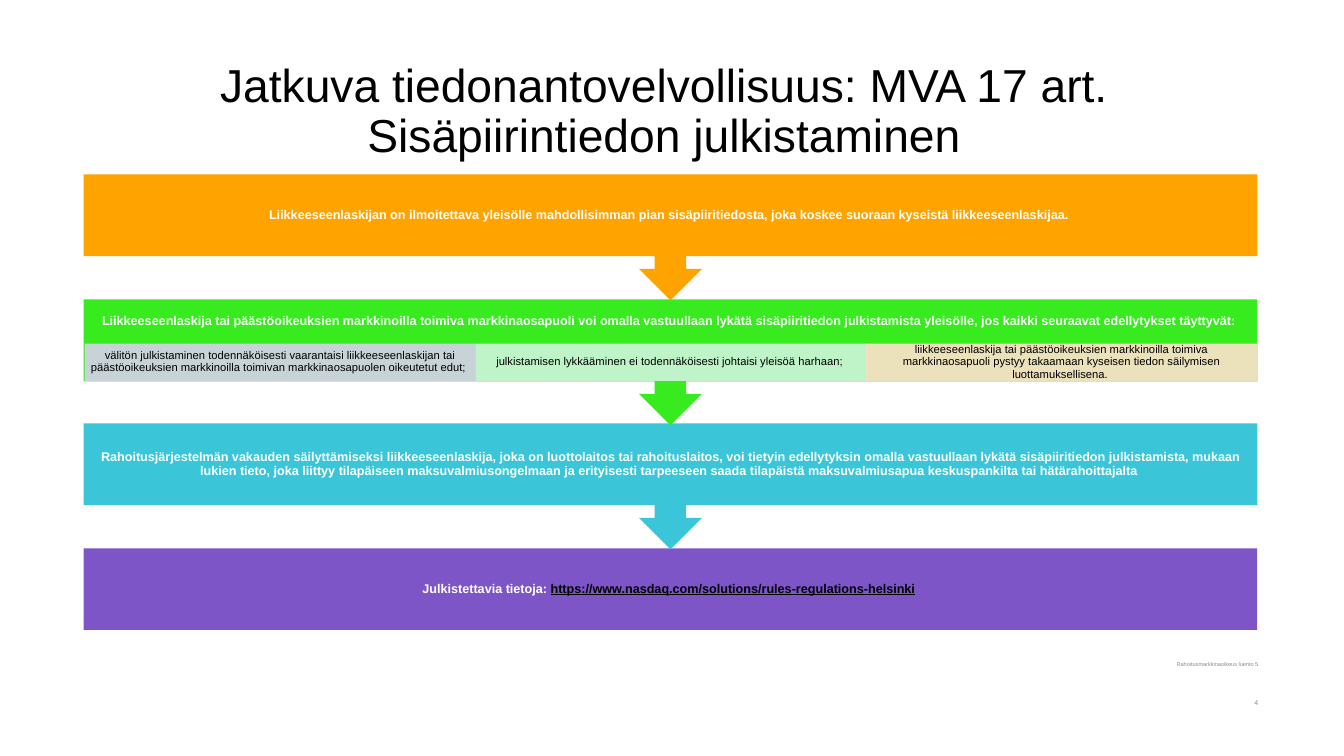
from dataclasses import dataclass

from lxml.etree import SubElement
from pptx import Presentation
from pptx.dml.color import RGBColor
from pptx.enum.shapes import MSO_SHAPE
from pptx.enum.text import MSO_ANCHOR, PP_ALIGN
from pptx.oxml.ns import qn
from pptx.util import Pt

PX = 9144  # 100 px to the inch


@dataclass(frozen=True)
class Theme:
    font: str = "Arial"
    black: str = "000000"
    white: str = "FFFFFF"
    grey: str = "8C8C8C"
    orange: str = "FFA300"
    green: str = "37EB1E"
    cyan: str = "3AC6D8"
    purple: str = "7D55C7"
    conditions: tuple = ("D7D1EB", "CDF6DA", "FFE0CB")
    title_size: int = 33
    step_size: int = 9
    condition_size: int = 8
    footer_size: int = 4
    number_size: int = 5


theme = Theme()


def write(shape, text, size, color, insets, bold=False, align=PP_ALIGN.CENTER):
    frame = shape.text_frame
    frame.word_wrap = True
    frame.vertical_anchor = MSO_ANCHOR.MIDDLE
    (frame.margin_left, frame.margin_top,
     frame.margin_right, frame.margin_bottom) = [inset * PX for inset in insets]
    frame.text = text
    paragraph = frame.paragraphs[0]
    paragraph.alignment = align
    paragraph.line_spacing = 0.9
    for run in paragraph.runs:
        run.font.name = theme.font
        run.font.size = Pt(size)
        run.font.bold = bold
        run.font.color.rgb = RGBColor.from_string(color)
    return paragraph


def add_panel(preset, left, top, width, height, color):
    panel = slide.shapes.add_shape(preset, left * PX, top * PX, width * PX, height * PX)
    panel.shadow.inherit = False
    panel.fill.solid()
    panel.fill.fore_color.rgb = RGBColor.from_string(color)
    panel.line.fill.background()
    return panel


prs = Presentation()
prs.slide_width = 1333 * PX
prs.slide_height = 750 * PX
slide = prs.slides.add_slide(prs.slide_layouts[6])

LEFT, WIDTH = 83, 1164
BODY_HEIGHT, CALLOUT_HEIGHT = 81, 125
FIRST_TOP, LAST_TOP = 173, 544
CONDITIONS_TOP, CONDITIONS_HEIGHT = 341, 37

# Title
title = slide.shapes.add_textbox(LEFT * PX, 53 * PX, WIDTH * PX, 118 * PX)
write(title,
      "Jatkuva tiedonantovelvollisuus: MVA 17 art. \vSisäpiirintiedon julkistaminen ",
      theme.title_size, theme.black, (10, 5, 10, 5))

# Footer and slide number
for text, top, height, size in [
    ("Rahoitusmarkkinaoikeus luento 5", 651, 17, theme.footer_size),
    ("4", 689, 18, theme.number_size),
]:
    footer = slide.shapes.add_textbox(720 * PX, top * PX, 528 * PX, height * PX)
    write(footer, text, size, theme.grey, (10, 5, 0, 5), align=PP_ALIGN.RIGHT)

# Steps, drawn from the bottom up so each arrow lies over the next step
steps = [
    (theme.orange,
     "Liikkeeseenlaskijan on ilmoitettava yleisölle mahdollisimman pian sisäpiiritiedosta, "
     "joka koskee suoraan kyseistä liikkeeseenlaskijaa. "),
    (theme.green,
     "Liikkeeseenlaskija tai päästöoikeuksien markkinoilla toimiva markkinaosapuoli voi "
     "omalla vastuullaan lykätä sisäpiiritiedon julkistamista yleisölle, jos kaikki "
     "seuraavat edellytykset täyttyvät: "),
    (theme.cyan,
     "Rahoitusjärjestelmän vakauden säilyttämiseksi liikkeeseenlaskija, joka on luottolaitos "
     "tai rahoituslaitos, voi tietyin edellytyksin omalla vastuullaan lykätä sisäpiiritiedon "
     "julkistamista, mukaan lukien tieto, joka liittyy tilapäiseen maksuvalmiusongelmaan ja "
     "erityisesti tarpeeseen saada tilapäistä maksuvalmiusapua keskuspankilta tai "
     "hätärahoittajalta "),
    (theme.purple, "Julkistettavia tietoja: "),
]
last = len(steps) - 1
for index in range(last, -1, -1):
    color, text = steps[index]
    top = FIRST_TOP + round((LAST_TOP - FIRST_TOP) * index / last)
    if index == last:
        step = add_panel(MSO_SHAPE.RECTANGLE, LEFT, top, WIDTH, BODY_HEIGHT, color)
    else:
        step = add_panel(MSO_SHAPE.DOWN_ARROW_CALLOUT, LEFT, top, WIDTH, CALLOUT_HEIGHT, color)
    # The green step leaves room for its conditions
    bottom = 7 + CONDITIONS_HEIGHT if color == theme.green else 7
    sentence = write(step, text, theme.step_size, theme.white, (7, 7, 7, bottom), bold=True)
    if index == last:
        for part, part_color, underline in [
            ("https://www.nasdaq.com/solutions/rules-regulations-helsinki", theme.black, True),
            (" ", theme.white, False),
        ]:
            run = sentence.add_run()
            run.text = part
            run.font.name = theme.font
            run.font.size = Pt(theme.step_size)
            run.font.bold = True
            run.font.underline = underline
            run.font.color.rgb = RGBColor.from_string(part_color)

# Conditions for delaying disclosure
conditions = [
    "välitön julkistaminen todennäköisesti vaarantaisi liikkeeseenlaskijan tai "
    "päästöoikeuksien markkinoilla toimivan markkinaosapuolen oikeutetut edut; ",
    "julkistamisen lykkääminen ei todennäköisesti johtaisi yleisöä harhaan; ",
    "liikkeeseenlaskija tai päästöoikeuksien markkinoilla toimiva markkinaosapuoli pystyy "
    "takaamaan kyseisen tiedon säilymisen luottamuksellisena. ",
]
for index, (text, color) in enumerate(zip(conditions, theme.conditions)):
    left = LEFT + 1 + round(index * (WIDTH - 1) / len(conditions))
    condition = add_panel(MSO_SHAPE.RECTANGLE, left, CONDITIONS_TOP, 388, CONDITIONS_HEIGHT, color)
    tint = condition.fill._xPr.find(qn("a:solidFill"))[0]
    SubElement(tint, qn("a:alpha")).set("val", "90000")
    write(condition, text, theme.condition_size, theme.black, (6, 1, 6, 1))

prs.save("out.pptx")
